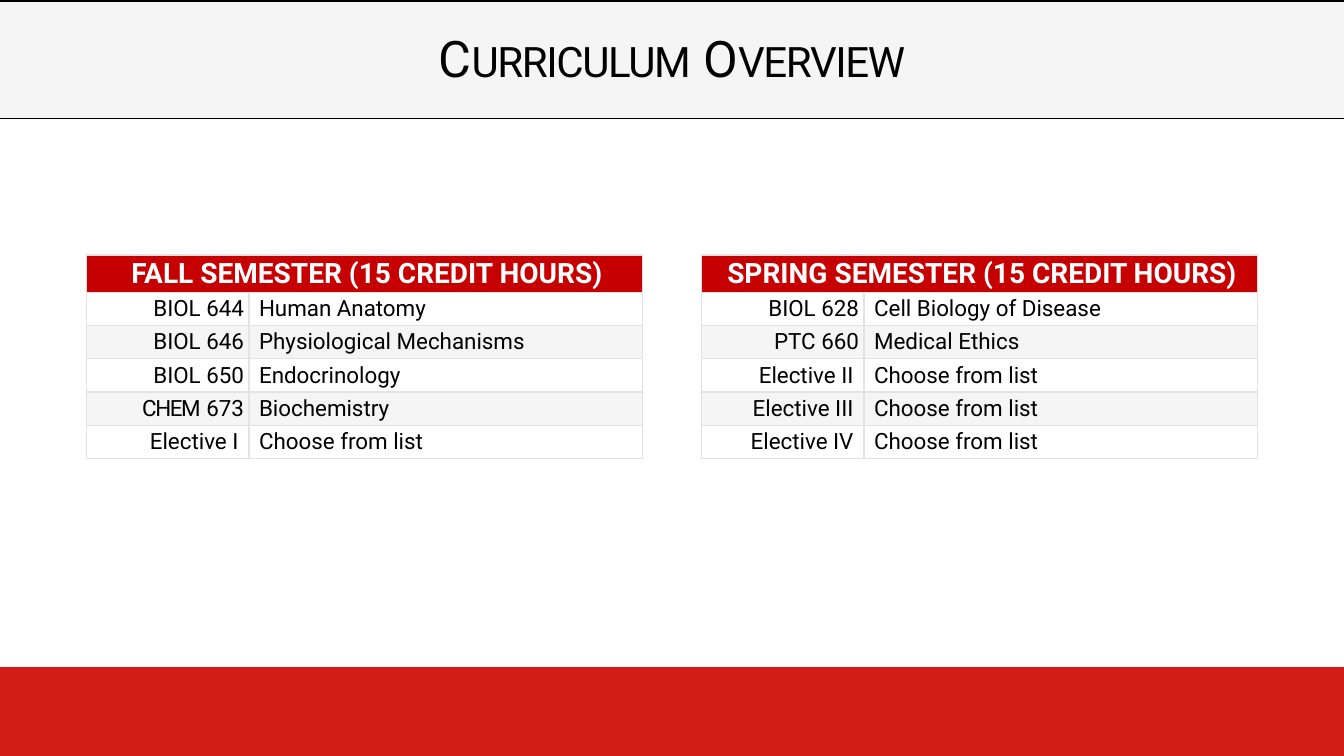
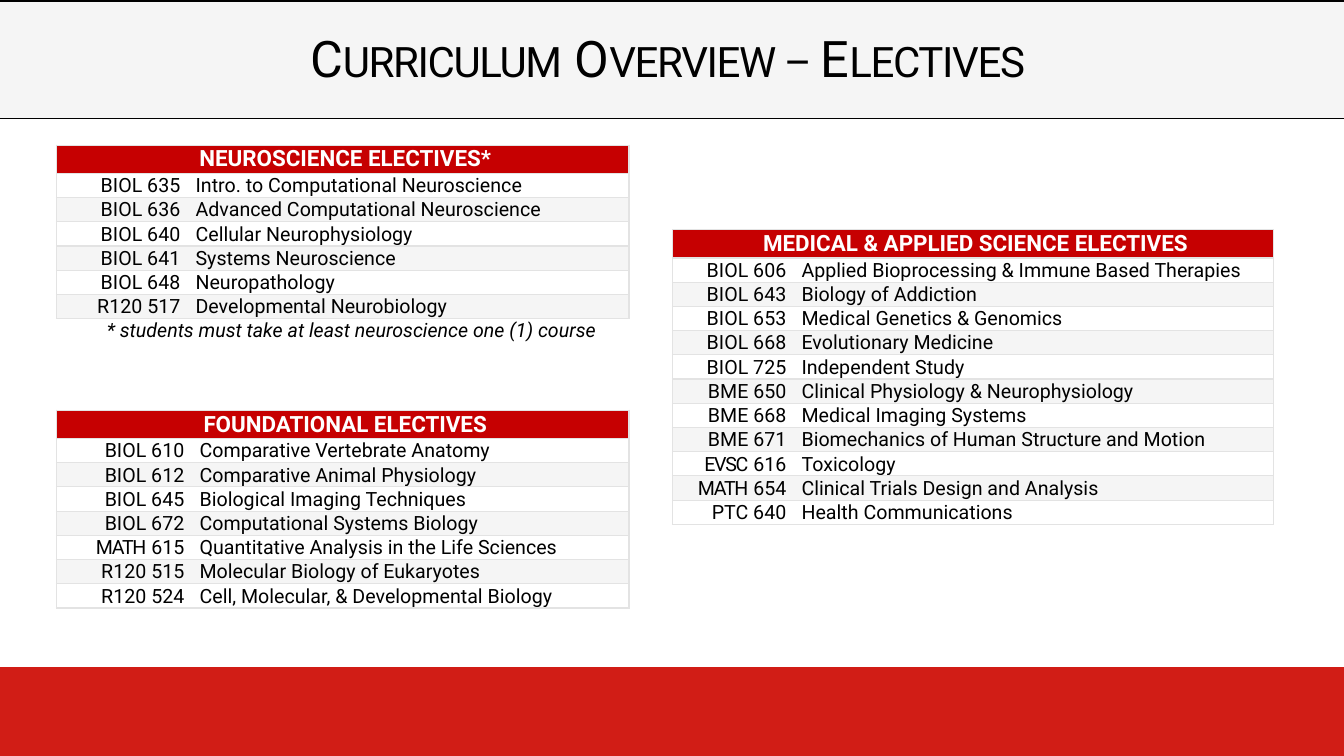
from dataclasses import dataclass
from lxml.etree import SubElement
from pptx import Presentation
from pptx.dml.color import RGBColor
from pptx.enum.shapes import MSO_SHAPE
from pptx.enum.text import MSO_ANCHOR, PP_ALIGN
from pptx.oxml import parse_xml
from pptx.oxml.ns import nsdecls, qn
from pptx.util import Inches, Pt

RED = RGBColor(0xD1, 0x1D, 0x16)
HEAD = RGBColor(0xC6, 0x00, 0x01)
PALE = RGBColor(0xF5, 0xF5, 0xF5)
GRID = RGBColor(0xE3, 0xE3, 0xE3)
BLACK = RGBColor(0, 0, 0)
WHITE = RGBColor(0xFF, 0xFF, 0xFF)
FONT = "Roboto"
WIDE, HIGH = 13.33, 7.5
BAND = (0, 0.01, WIDE, 1.17)
FOOT = (0, 6.62, WIDE, 0.88)
TIGHT = ("CHEM", "EVSC", "MATH")  # course prefixes set with closer letters
BANDPAD = (0.1, 0.05, 0.1, 0.05)
HEADPAD = (0.1, 0.01, 0.05, 0.01)
NOTEPAD = (0.5, 0.01, 0.1, 0)


@dataclass
class Look:
    """Sizes, row heights and cell margins of one kind of course table."""
    head: int
    body: int
    top: float
    row: float
    code: tuple
    name: tuple
    split: bool  # rule between code and name


TERM = Look(20, 16, 0.37, 0.33, (0.01, 0.01, 0.05, 0.01), (0.1, 0.01, 0.05, 0.01), True)
LIST = Look(16, 14, 0.28, 0.24, (0.1, 0.01, 0.1, 0), (0.05, 0.01, 0.01, 0), False)

FALL = ("FALL SEMESTER (15 CREDIT HOURS)", [
    ("BIOL 644", "Human Anatomy"),
    ("BIOL 646", "Physiological Mechanisms"),
    ("BIOL 650", "Endocrinology"),
    ("CHEM 673", "Biochemistry"),
    ("Elective I ", "Choose from list")])
SPRING = ("SPRING SEMESTER (15 CREDIT HOURS)", [
    ("BIOL 628", "Cell Biology of Disease"),
    ("PTC 660", "Medical Ethics"),
    ("Elective II ", "Choose from list"),
    ("Elective III ", "Choose from list"),
    ("Elective IV ", "Choose from list")])
NEURO = ("NEUROSCIENCE ELECTIVES*", [
    ("BIOL 635", "Intro. to Computational Neuroscience"),
    ("BIOL 636", "Advanced Computational Neuroscience"),
    ("BIOL 640", "Cellular Neurophysiology"),
    ("BIOL 641", "Systems Neuroscience"),
    ("BIOL 648", "Neuropathology"),
    ("R120 517", "Developmental Neurobiology")])
BASE = ("FOUNDATIONAL ELECTIVES", [
    ("BIOL 610", "Comparative Vertebrate Anatomy"),
    ("BIOL 612", "Comparative Animal Physiology"),
    ("BIOL 645", "Biological Imaging Techniques"),
    ("BIOL 672", "Computational Systems Biology"),
    ("MATH 615", "Quantitative Analysis in the Life Sciences"),
    ("R120 515", "Molecular Biology of Eukaryotes"),
    ("R120 524", "Cell, Molecular, & Developmental Biology")])
MEDICAL = ("MEDICAL & APPLIED SCIENCE ELECTIVES", [
    ("BIOL 606", "Applied Bioprocessing & Immune Based Therapies"),
    ("BIOL 643", "Biology of Addiction"),
    ("BIOL 653", "Medical Genetics & Genomics"),
    ("BIOL 668", "Evolutionary Medicine"),
    ("BIOL 725", "Independent Study"),
    ("BME 650", "Clinical Physiology & Neurophysiology"),
    ("BME 668", "Medical Imaging Systems"),
    ("BME 671", "Biomechanics of Human Structure and Motion"),
    ("EVSC 616", "Toxicology"),
    ("MATH 654", "Clinical Trials Design and Analysis"),
    ("PTC 640", "Health Communications")])
NOTE = "* students must take at least neuroscience one (1) course"


def write(par, parts, color=BLACK, bold=False, italic=False):
    """Fill a paragraph with runs given as (text, size, spacing)."""
    for text, size, gap in parts:
        run = par.add_run()
        run.text = text
        font = run.font
        font.name, font.size, font.bold, font.italic = FONT, Pt(size), bold, italic
        font.color.rgb = color
        if gap:
            run._r.get_or_add_rPr().set("spc", str(gap * 100))


def edge(cell, sides, color=GRID):
    """Draw the named sides (of "LRTB") and clear the others."""
    props = cell._tc.get_or_add_tcPr()
    for spot, side in enumerate("LRTB"):
        line = parse_xml(f'<a:ln{side} {nsdecls("a")} w="12700"/>')
        if side in sides:
            fill = SubElement(line, qn("a:solidFill"))
            SubElement(fill, qn("a:srgbClr")).set("val", str(color))
        else:
            SubElement(line, qn("a:noFill"))
        props.insert(spot, line)


def dress(cell, pad, align, fill, sides, color=GRID):
    """Set margins, alignment, fill and borders; return the paragraph."""
    (cell.margin_left, cell.margin_top,
     cell.margin_right, cell.margin_bottom) = map(Inches, pad)
    cell.vertical_anchor = MSO_ANCHOR.MIDDLE
    if fill is None:
        cell.fill.background()
    else:
        cell.fill.solid()
        cell.fill.fore_color.rgb = fill
    edge(cell, sides, color)
    par = cell.text_frame.paragraphs[0]
    par.alignment = align
    return par


def span(grid, row, pad, align, fill, sides):
    """Merge a whole row and return its paragraph."""
    left, right = grid.cell(row, 0), grid.cell(row, 1)
    left.merge(right)
    edge(right, sides)
    return dress(left, pad, align, fill, sides)


def table(slide, spot, cols, rows):
    """Plain table with the given column widths and row heights."""
    box = (*spot, sum(cols), sum(rows))
    grid = slide.shapes.add_table(len(rows), len(cols), *map(Inches, box)).table
    grid.first_row = grid.horz_banding = False
    for col, wide in zip(grid.columns, cols):
        col.width = Inches(wide)
    for row, high in zip(grid.rows, rows):
        row.height = Inches(high)
    return grid


def courses(slide, spot, cols, data, look, note=None):
    """Course table with its top left corner at spot."""
    title, rows = data
    count = len(rows) + bool(note)
    grid = table(slide, spot, cols, [look.top] + [look.row] * count)

    # Heading
    par = span(grid, 0, HEADPAD, PP_ALIGN.CENTER, HEAD, "LRTB")
    write(par, [(title, look.head, 0)], WHITE, bold=True)

    # Courses, every second row tinted
    sides = ("LRTB", "LRTB") if look.split else ("LTB", "RTB")
    for num, (code, name) in enumerate(rows, 1):
        fill = None if num % 2 else PALE
        par = dress(grid.cell(num, 0), look.code, PP_ALIGN.RIGHT, fill, sides[0])
        start = code[:4]
        if start in TIGHT:
            write(par, [(start, look.body, -1), (code[4:], look.body, 0)])
        else:
            write(par, [(code, look.body, 0)])
        par = dress(grid.cell(num, 1), look.name, PP_ALIGN.LEFT, fill, sides[1])
        write(par, [(name, look.body, 0)])

    # Closing note
    if note:
        par = span(grid, count, NOTEPAD, PP_ALIGN.LEFT, None, "T")
        write(par, [(note, look.body, 0)], italic=True)


def heading(slide, text):
    """Title band; single letters between bars are large, the rest small."""
    left, top, wide, high = BAND
    grid = table(slide, (left, top), [wide], [high])
    par = dress(grid.cell(0, 0), BANDPAD, PP_ALIGN.CENTER, PALE, "TB", BLACK)
    write(par, [(part, 36 if len(part) == 1 else 30, 0 if part == " " else -1)
                for part in text.split("|")])


def footer(layout, slide):
    """Draw the red band once and move it onto the layout."""
    for holder in list(layout.placeholders):
        layout.shapes.element.remove(holder.element)
    band = slide.shapes.add_shape(MSO_SHAPE.RECTANGLE, *map(Inches, FOOT))
    band.shadow.inherit = False
    band.fill.solid()
    band.fill.fore_color.rgb = band.line.color.rgb = RED
    band.line.width = Pt(1)
    layout.shapes.element.append(band.element)


def terms(slide):
    heading(slide, "C|URRICULUM| |O|VERVIEW")
    for num, data in enumerate((FALL, SPRING)):
        courses(slide, (0.86 + 6.1 * num, 2.53), (1.61, 3.9), data, TERM)


def options(slide):
    heading(slide, "C|URRICULUM| |O|VERVIEW – |E|LECTIVES ")
    courses(slide, (0.56, 1.44), (1.33, 4.35), NEURO, LIST, NOTE)
    courses(slide, (0.56, 4.07), (1.37, 4.31), BASE, LIST)
    courses(slide, (6.67, 2.28), (1.23, 4.73), MEDICAL, LIST)


def main():
    deck = Presentation()
    deck.slide_width, deck.slide_height = Inches(WIDE), Inches(HIGH)
    layout = deck.slide_layouts[6]
    first, second = (deck.slides.add_slide(layout) for _ in range(2))
    footer(layout, first)
    terms(first)
    options(second)
    deck.save("out.pptx")


if __name__ == "__main__":
    main()
